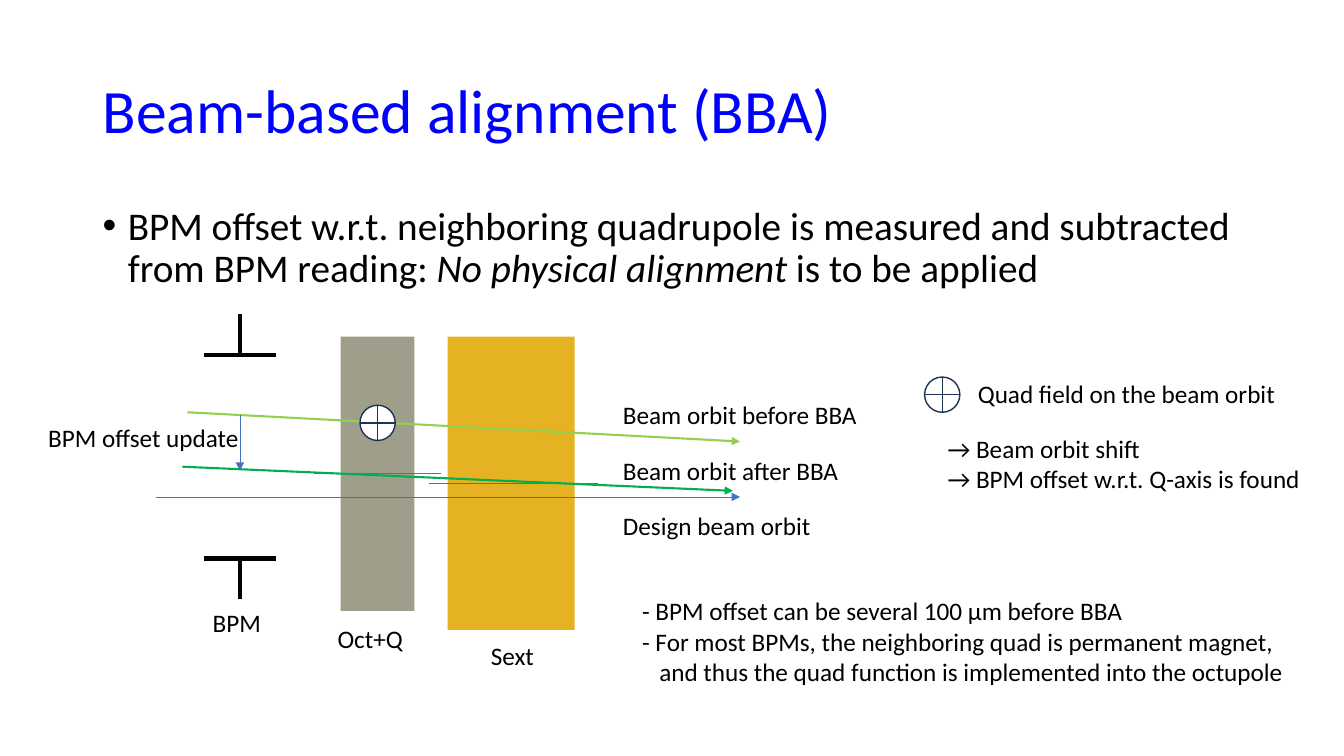
from dataclasses import dataclass

from lxml.etree import SubElement
from pptx import Presentation
from pptx.dml.color import RGBColor
from pptx.enum.shapes import MSO_CONNECTOR, MSO_SHAPE as Preset
from pptx.enum.text import MSO_ANCHOR as Anchor, MSO_AUTO_SIZE as AutoSize
from pptx.oxml.ns import qn
from pptx.util import Emu, Pt

EMU_PER_PX = 9144


@dataclass(frozen=True)
class Theme:
    font: str = "Calibri"
    title_size: int = 44
    body_size: int = 28
    label_size: int = 18
    title: str = "0000FF"
    black: str = "000000"
    white: str = "FFFFFF"
    sextupole: str = "E5B223"
    octupole: str = "9E9E8A"
    axis: str = "4472C4"
    before: str = "92D050"
    after: str = "00B050"
    symbol: str = "1E3256"


THEME = Theme()


@dataclass(frozen=True)
class Box:
    left: int
    top: int
    width: int
    height: int

    def emu(self) -> list[Emu]:
        return [px(side) for side in (self.left, self.top, self.width, self.height)]


@dataclass(frozen=True)
class Block:
    box: Box
    fill: str
    preset: Preset = Preset.RECTANGLE
    outline: str | None = None


@dataclass(frozen=True)
class Line:
    start: tuple[int, int]
    end: tuple[int, int]
    color: str
    weight: float
    arrow: bool = False


@dataclass(frozen=True)
class Run:
    text: str
    italic: bool = False


@dataclass(frozen=True)
class Label:
    box: Box
    lines: list[str]


def px(length: int) -> Emu:
    return Emu(length * EMU_PER_PX)


def rgb(color: str) -> RGBColor:
    return RGBColor.from_string(color)


def add_block(slide, block: Block) -> None:
    shape = slide.shapes.add_shape(block.preset, *block.box.emu())
    shape.shadow.inherit = False
    shape.fill.solid()
    shape.fill.fore_color.rgb = rgb(block.fill)
    if block.outline:
        shape.line.color.rgb = rgb(block.outline)
        shape.line.width = Pt(1)
    else:
        shape.line.fill.background()


def add_line(slide, line: Line) -> None:
    ends = [px(value) for value in (*line.start, *line.end)]
    connector = slide.shapes.add_connector(MSO_CONNECTOR.STRAIGHT, *ends)
    connector.line.color.rgb = rgb(line.color)
    connector.line.width = Pt(line.weight)
    if line.arrow:
        SubElement(connector.line._ln, qn("a:tailEnd"), type="triangle")
    SubElement(connector._element.spPr, qn("a:effectLst"))


def add_text(slide, box: Box, paragraphs: list[list[Run]], *,
             size: int = THEME.label_size, color: str = THEME.black,
             anchor: Anchor = Anchor.TOP, wrap: bool = False,
             grow: bool = True, line_spacing: float = 1.0,
             bullet: bool = False, last_indent: int = 0) -> None:
    """Write paragraphs of runs; last_indent insets the final paragraph."""
    frame = slide.shapes.add_textbox(*box.emu()).text_frame
    frame.word_wrap = wrap
    frame.auto_size = AutoSize.SHAPE_TO_FIT_TEXT if grow else AutoSize.NONE
    frame.vertical_anchor = anchor
    for index, runs in enumerate(paragraphs):
        paragraph = frame.paragraphs[0] if index == 0 else frame.add_paragraph()
        properties = paragraph._p.get_or_add_pPr()
        if bullet:
            properties.set("marL", str(px(25)))
            properties.set("indent", str(px(-25)))
            SubElement(properties, qn("a:buFont"), typeface="Arial")
            SubElement(properties, qn("a:buChar"), char="•")
        elif last_indent and index == len(paragraphs) - 1:
            properties.set("marL", str(px(last_indent)))
        paragraph.line_spacing = line_spacing
        for part in runs:
            run = paragraph.add_run()
            run.text = part.text
            run.font.name = THEME.font
            run.font.size = Pt(size)
            run.font.color.rgb = rgb(color)
            run.font.italic = part.italic


def bpm_electrode(plate_y: int, stem: int) -> list[Line]:
    """A plate with a stem; a negative stem points up."""
    center, half = 238, 36
    return [
        Line((center - half, plate_y), (center + half, plate_y), THEME.black, 3),
        Line((center, plate_y), (center, plate_y + stem), THEME.black, 3),
    ]


MAGNETS = [
    Block(Box(444, 334, 126, 291), THEME.sextupole),
    Block(Box(338, 334, 73, 272), THEME.octupole),
]
LINES = [
    Line((155, 493), (734, 493), THEME.axis, 0.5, arrow=True),
    Line((311, 470), (437, 470), THEME.axis, 0.5),
    Line((425, 480), (593, 480), THEME.axis, 0.5),
    Line((186, 409), (734, 438), THEME.before, 1.5, arrow=True),
    *bpm_electrode(352, -40),
    *bpm_electrode(554, 40),
    Line((181, 463), (727, 487), THEME.after, 1.5, arrow=True),
    Line((238, 412), (238, 467), THEME.axis, 0.5, arrow=True),
]
QUAD_FIELDS = [
    Block(Box(left, top, 35, 35), THEME.white, Preset.FLOWCHART_OR, THEME.symbol)
    for left, top in ((357, 402), (917, 374))
]
LABELS = [
    Label(Box(325, 613, 86, 40), ["Oct+Q"]),
    Label(Box(477, 630, 63, 40), ["Sext"]),
    Label(Box(201, 598, 68, 40), ["BPM"]),
    Label(Box(608, 391, 255, 40), ["Beam orbit before BBA"]),
    Label(Box(608, 447, 237, 40), ["Beam orbit after BBA"]),
    Label(Box(608, 501, 214, 40), ["Design beam orbit"]),
    Label(Box(38, 414, 211, 40), ["BPM offset update"]),
    Label(Box(960, 370, 319, 40), ["Quad field on the beam orbit"]),
    Label(Box(930, 425, 393, 71),
          ["→ Beam orbit shift", "→ BPM offset w.r.t. Q-axis is found"]),
]
STATEMENT = [
    Run("BPM offset w.r.t. neighboring quadrupole is measured and subtracted "
        "from BPM reading: "),
    Run("No physical alignment ", italic=True),
    Run("is to be applied"),
]
REMARKS = [
    "- BPM offset can be several 100 μm before BBA",
    "- For most BPMs, the neighboring quad is permanent magnet,",
    "and thus the quad function is implemented into the octupole",
]


def main() -> None:
    presentation = Presentation()
    presentation.slide_width, presentation.slide_height = px(1333), px(750)
    slide = presentation.slides.add_slide(presentation.slide_layouts[6])

    for magnet in MAGNETS:
        add_block(slide, magnet)
    add_text(slide, Box(92, 40, 1150, 145), [[Run("Beam-based alignment (BBA)")]],
             size=THEME.title_size, color=THEME.title, anchor=Anchor.MIDDLE,
             wrap=True, grow=False, line_spacing=0.9)
    add_text(slide, Box(92, 200, 1150, 476), [STATEMENT], size=THEME.body_size,
             wrap=True, grow=False, line_spacing=0.9, bullet=True)
    for line in LINES:
        add_line(slide, line)
    for quad_field in QUAD_FIELDS:
        add_block(slide, quad_field)
    for label in LABELS:
        add_text(slide, label.box, [[Run(text)] for text in label.lines])
    add_text(slide, Box(627, 586, 681, 101), [[Run(text)] for text in REMARKS],
             wrap=True, last_indent=17)
    presentation.save("out.pptx")


if __name__ == "__main__":
    main()
